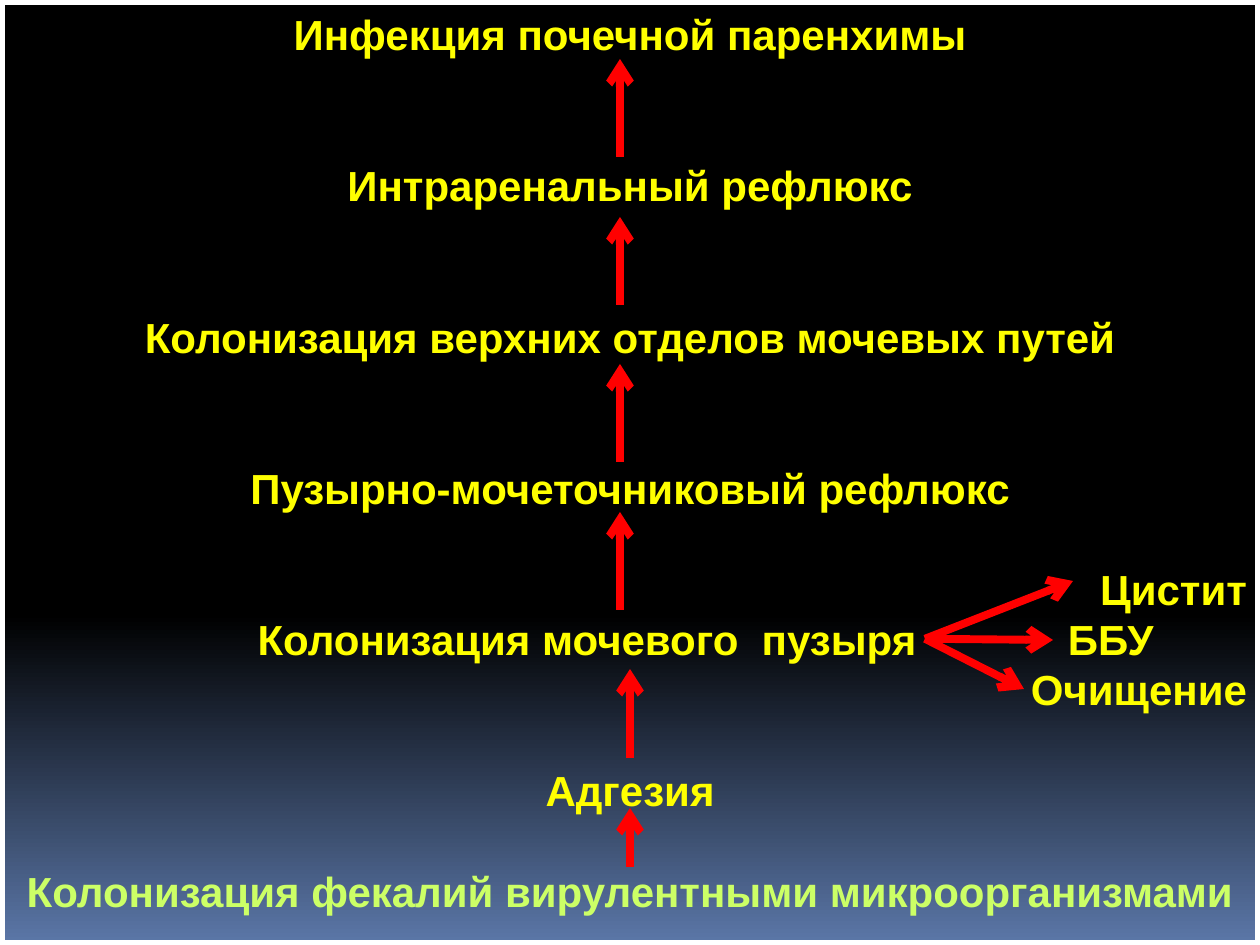
from copy import deepcopy
from typing import NamedTuple

from lxml import etree
from pptx import Presentation
from pptx import util as u
from pptx.dml.color import RGBColor
from pptx.enum import shapes, text
from pptx.oxml.ns import qn

PX = 914400 / 126
WIDTH, HEIGHT = 1260, 945
FIRST_ROW, PITCH, ROW_HEIGHT = 34, 50.4, 50
YELLOW, LIME, RED, WHITE = "FFFF00", "CCFF66", "FF0000", "FFFFFF"
LEFT, CENTER, RIGHT = text.PP_ALIGN.LEFT, text.PP_ALIGN.CENTER, text.PP_ALIGN.RIGHT
FONT = {"name": "Arial", "size": u.Pt(24), "bold": True}
FRAME = {"word_wrap": True, "vertical_anchor": text.MSO_ANCHOR.MIDDLE,
         "margin_left": 0, "margin_right": 0, "margin_top": 0, "margin_bottom": 0}


class Label(NamedTuple):
    words: str
    row: int
    left: int = 10
    width: int = 1240
    align: text.PP_ALIGN = CENTER
    color: str = YELLOW


class Arrow(NamedTuple):
    x1: int
    y1: int
    x2: int
    y2: int


STAGES = [
    Label("Инфекция почечной паренхимы", 0),
    Label("Интраренальный рефлюкс", 3),
    Label("Колонизация верхних отделов мочевых путей", 6),
    Label("Пузырно-мочеточниковый рефлюкс", 9),
    Label("Адгезия", 15),
    Label("Колонизация фекалий вирулентными микроорганизмами", 17, color=LIME),
]
BLADDER = Label("Колонизация мочевого  пузыря", 12, 249, 676)
OUTCOMES = [
    Label("Цистит", 11, 1047, 200, RIGHT),
    Label("ББУ", 12, 1068, 179, LEFT),
    Label("Очищение", 13, 1017, 230, RIGHT),
]
STAGE_ARROWS = [Arrow(x, y1, x, y2) for x, y1, y2 in [
    (630, 867, 808), (630, 758, 669), (620, 610, 512),
    (620, 462, 364), (620, 305, 217), (620, 157, 59)]]
OUTCOME_ARROWS = [Arrow(925, 640, x, y) for x, y in [(1073, 581), (1053, 640), (1024, 689)]]


def px(n: float) -> int:
    return round(n * PX)


def rgb(value: str) -> RGBColor:
    return RGBColor.from_string(value)


def apply(target, values: dict) -> None:
    for key, value in values.items():
        setattr(target, key, value)


def paint_background(s) -> None:
    fill = s.background.fill
    fill.gradient()
    fill.gradient_angle = 270
    first = fill.gradient_stops[0]
    gs = s.background._cSld.find(".//" + qn("a:gs"))
    gs.addnext(deepcopy(gs))
    for stop, (position, color) in zip(
            fill.gradient_stops, [(0, "000000"), (0.65, "000000"), (1, "5B77A8")]):
        stop.position = position
        stop.color.rgb = rgb(color)


def add_frame(s) -> None:
    sp = s.shapes.add_shape(shapes.MSO_SHAPE.RECTANGLE, 0, 0, px(WIDTH), px(HEIGHT))
    sp.shadow.inherit = False
    sp.fill.background()
    sp.line.color.rgb = rgb(WHITE)
    sp.line.width = u.Pt(6)


def add_label(s, label: Label):
    top = FIRST_ROW + label.row * PITCH - ROW_HEIGHT / 2
    sp = s.shapes.add_textbox(px(label.left), px(top), px(label.width), px(ROW_HEIGHT))
    tf = sp.text_frame
    apply(tf, FRAME)
    p = tf.paragraphs[0]
    p.alignment = label.align
    r = p.add_run()
    r.text = label.words
    apply(r.font, FONT)
    r.font.color.rgb = rgb(label.color)
    return sp


def add_arrow(s, arrow: Arrow):
    c = s.shapes.add_connector(shapes.MSO_CONNECTOR.STRAIGHT, *map(px, arrow))
    c.line.color.rgb = rgb(RED)
    c.line.width = u.Pt(4.5)
    etree.SubElement(c.line._get_or_add_ln(), qn("a:tailEnd"), type="arrow")
    etree.SubElement(c._element.spPr, qn("a:effectLst"))
    return c


def main() -> None:
    prs = Presentation()
    prs.slide_width, prs.slide_height = px(WIDTH), px(HEIGHT)
    s = prs.slides.add_slide(prs.slide_layouts[6])
    paint_background(s)
    add_frame(s)
    for label in STAGES + OUTCOMES:
        add_label(s, label)
    bladder = add_label(s, BLADDER)
    for arrow in STAGE_ARROWS:
        add_arrow(s, arrow)
    for arrow in OUTCOME_ARROWS:
        add_arrow(s, arrow).begin_connect(bladder, 3)
    prs.save("out.pptx")


if __name__ == "__main__":
    main()
